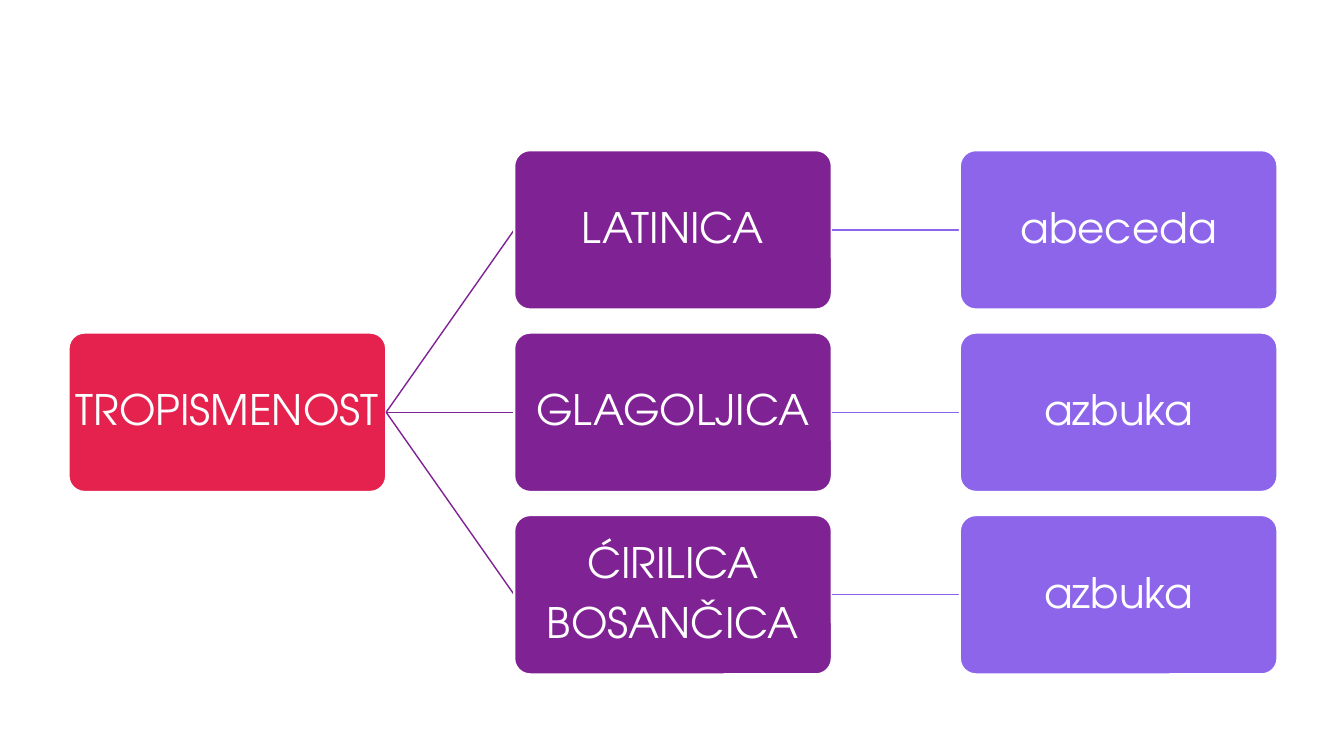
import dataclasses

import pptx
import pptx.dml.color
import pptx.enum.shapes
import pptx.enum.text
import pptx.oxml.ns
import pptx.util
import lxml.etree
from pptx.shapes.autoshape import Shape
from pptx.shapes.connector import Connector
from pptx.slide import Slide

SCALE = 9144  # EMU per px, at 100 px to the inch
WIDTH, HEIGHT = 315, 158
LEFT, TOP = 68, 149
COL_STEP, ROW_STEP = 442, 181
FONT = "TeX Gyre Adventor"
WHITE, RED, PURPLE, VIOLET = "FFFFFF", "E5224E", "7F2294", "8D65EA"
RIGHT_SIDE, LEFT_SIDE = 3, 1


@dataclasses.dataclass(frozen=True)
class Script:
    names: tuple[str, ...]
    order: str


SCRIPTS = (
    Script(("LATINICA",), "abeceda"),
    Script(("GLAGOLJICA",), "azbuka"),
    Script(("ĆIRILICA", "BOSANČICA"), "azbuka"),
)


def px(count: int) -> pptx.util.Emu:
    return pptx.util.Emu(count * SCALE)


def color(code: str) -> pptx.dml.color.RGBColor:
    return pptx.dml.color.RGBColor.from_string(code)


def add_box(slide: Slide, col: int, row: int, lines: tuple[str, ...], fill: str) -> Shape:
    box = slide.shapes.add_shape(
        pptx.enum.shapes.MSO_SHAPE.ROUNDED_RECTANGLE,
        px(LEFT + col * COL_STEP), px(TOP + row * ROW_STEP), px(WIDTH), px(HEIGHT),
    )
    box.adjustments[0] = 0.1
    box.shadow.inherit = False
    box.fill.solid()
    box.fill.fore_color.rgb = color(fill)
    box.line.color.rgb = color(WHITE)
    box.line.width = pptx.util.Pt(1.5)

    frame = box.text_frame
    frame.word_wrap = True
    frame.vertical_anchor = pptx.enum.text.MSO_ANCHOR.MIDDLE
    frame.margin_left = frame.margin_right = px(2)
    frame.margin_top = frame.margin_bottom = px(2)
    for index, line in enumerate(lines):
        para = frame.add_paragraph() if index else frame.paragraphs[0]
        para.alignment = pptx.enum.text.PP_ALIGN.CENTER
        para.line_spacing = 0.9
        para.space_after = pptx.util.Pt(10.5)
        run = para.add_run()
        run.text = line
        run.font.name = FONT
        run.font.size = pptx.util.Pt(30)
        run.font.color.rgb = color(WHITE)
    return box


def add_link(slide: Slide, code: str) -> Connector:
    link = slide.shapes.add_connector(
        pptx.enum.shapes.MSO_CONNECTOR.STRAIGHT, px(0), px(0), px(0), px(0)
    )
    link.line.color.rgb = color(code)
    link.line.width = pptx.util.Pt(1)
    lxml.etree.SubElement(link._element.spPr, pptx.oxml.ns.qn("a:effectLst"))
    return link


def add_child(
    slide: Slide, parent: Shape, col: int, row: int, lines: tuple[str, ...], fill: str
) -> Shape:
    """Add a box joined to its parent, with the link lying behind the box."""
    link = add_link(slide, fill)
    child = add_box(slide, col, row, lines, fill)
    link.begin_connect(parent, RIGHT_SIDE)
    link.end_connect(child, LEFT_SIDE)
    return child


def main() -> None:
    deck = pptx.Presentation()
    deck.slide_width, deck.slide_height = px(1333), px(750)
    slide = deck.slides.add_slide(deck.slide_layouts[6])
    root = add_box(slide, 0, 1, ("TROPISMENOST",), RED)
    for row, script in enumerate(SCRIPTS):
        branch = add_child(slide, root, 1, row, script.names, PURPLE)
        add_child(slide, branch, 2, row, (script.order,), VIOLET)
    deck.save("out.pptx")


if __name__ == "__main__":
    main()
